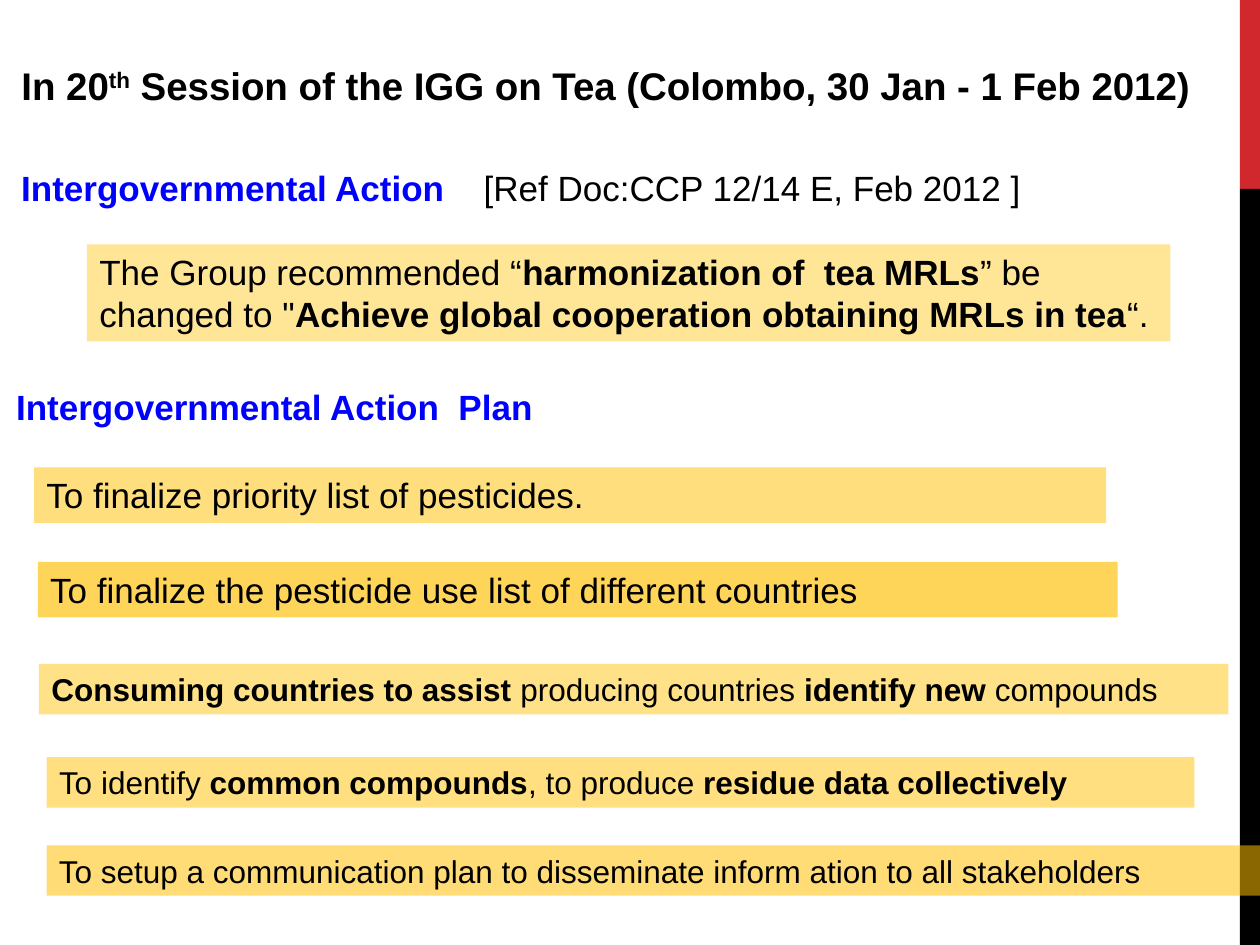
from lxml import etree
from pptx import Presentation
from pptx import util as u
from pptx.dml.color import RGBColor
from pptx.enum import shapes, text
from pptx.oxml.ns import qn

BLACK = RGBColor(0x00, 0x00, 0x00)
BLUE = RGBColor(0x00, 0x00, 0xFF)
RED = RGBColor(0xD1, 0x28, 0x2E)
AMBER = RGBColor(0xFF, 0xC0, 0x00)

COLUMNS, ROWS = 100, 75
TITLE_ONLY = 5


class SlideBuilder:
    """Holds the text style and the current slide; lengths are grid columns and rows."""

    font_name = "Arial"
    frame_format = {
        "word_wrap": True,
        "auto_size": text.MSO_AUTO_SIZE.NONE,
        "vertical_anchor": text.MSO_ANCHOR.TOP,
        "margin_left": u.Inches(0.1),
        "margin_right": u.Inches(0.1),
        "margin_top": u.Inches(0.05),
        "margin_bottom": u.Inches(0.05),
    }

    def __init__(self, presentation):
        self.column = presentation.slide_width / COLUMNS
        self.row = presentation.slide_height / ROWS
        self.slide = presentation.slides.add_slide(presentation.slide_layouts[TITLE_ONLY])

    def box(self, left, top, width, height):
        return (round(left * self.column), round(top * self.row),
                round(width * self.column), round(height * self.row))

    def fill_text(self, shape, marked_text, size, color=BLACK):
        """Set one left-aligned paragraph; parts between asterisks are bold."""
        frame = shape.text_frame
        for name, value in self.frame_format.items():
            setattr(frame, name, value)
        paragraph = frame.paragraphs[0]
        paragraph.alignment = text.PP_ALIGN.LEFT
        for index, part in enumerate(marked_text.split("*")):
            if part:
                self.add_run(paragraph, part, size, color, index % 2 == 1)
        return paragraph

    def add_run(self, paragraph, words, size, color=BLACK, bold=False):
        run = paragraph.add_run()
        run.text = words
        font_format = {"name": self.font_name, "size": u.Pt(size), "bold": bold}
        for name, value in font_format.items():
            setattr(run.font, name, value)
        run.font.color.rgb = color
        return run

    def title(self, place, before, superscript, after, size):
        title = self.slide.shapes.title
        title.left, title.top, title.width, title.height = self.box(*place)
        paragraph = self.fill_text(title, f"*{before}*", size)
        raised = self.add_run(paragraph, superscript, size, bold=True)
        raised._r.get_or_add_rPr().set("baseline", "30000")
        self.add_run(paragraph, after, size, bold=True)

    def heading(self, place, words, size=20):
        heading = self.slide.shapes.add_textbox(*self.box(*place))
        return self.fill_text(heading, f"*{words}*", size, BLUE)

    def reference(self, paragraph, words, tab_column, size=20):
        """Continue a heading with plain text at a tab stop."""
        tab_list = etree.SubElement(paragraph._p.get_or_add_pPr(), qn("a:tabLst"))
        position = str(round(tab_column * self.column))
        etree.SubElement(tab_list, qn("a:tab"), pos=position, algn="l")
        self.add_run(paragraph, "\t" + words, size)

    def bar(self, place, color, opacity=100):
        bar = self.slide.shapes.add_shape(shapes.MSO_SHAPE.RECTANGLE, *self.box(*place))
        bar.shadow.inherit = False
        bar.line.fill.background()
        bar.fill.solid()
        bar.fill.fore_color.rgb = color
        if opacity < 100:
            color_element = bar._element.spPr.find(qn("a:solidFill"))[0]
            etree.SubElement(color_element, qn("a:alpha"), val=str(opacity * 1000))
        return bar

    def statement(self, place, marked_text, size, opacity):
        self.fill_text(self.bar(place, AMBER, opacity), marked_text, size)


def main():
    presentation = Presentation()
    presentation.slide_width = u.Inches(10)
    presentation.slide_height = u.Inches(7.5)
    builder = SlideBuilder(presentation)

    # Side band
    builder.bar((98.4, 0, 1.6, 15), RED)
    builder.bar((98.4, 15, 1.6, 60), BLACK)

    # Title
    builder.title((0.7, 4.4, 95.9, 4.7), "In 20", "th",
                  " Session of the IGG on Tea (Colombo, 30 Jan - 1 Feb 2012)", 22)

    # Recommendation
    action = builder.heading((0.7, 12.7, 81.9, 4.4), "Intergovernmental Action")
    builder.reference(action, "[Ref Doc:CCP 12/14 E, Feb 2012 ]", 36.7)
    builder.statement(
        (6.9, 19.4, 86, 7.7),
        "The Group recommended “*harmonization of  tea MRLs*” be changed to "
        "\"*Achieve global cooperation obtaining MRLs in tea*“.", 20, 41)

    # Action plan: left, top, width, height, size, opacity, words
    builder.heading((0.3, 30.1, 43.3, 4.4), "Intergovernmental Action  Plan")
    plan = [
        (2.7, 37.1, 85.1, 4.4, 20, 51, "To finalize priority list of pesticides."),
        (3, 44.6, 85.7, 4.4, 20, 65,
         "To finalize the pesticide use list of different countries"),
        (3.1, 52.7, 94.4, 4, 18, 47,
         "*Consuming countries to assist* producing countries *identify new *compounds"),
        (3.7, 60.1, 91.1, 4, 18, 50,
         "To identify *common compounds*, to produce *residue data collectively*"),
        (3.7, 67.1, 96.3, 4, 18, 54,
         "To setup a communication plan to disseminate inform ation to all stakeholders"),
    ]
    for *place, size, opacity, words in plan:
        builder.statement(place, words, size, opacity)

    presentation.save("out.pptx")


if __name__ == "__main__":
    main()
